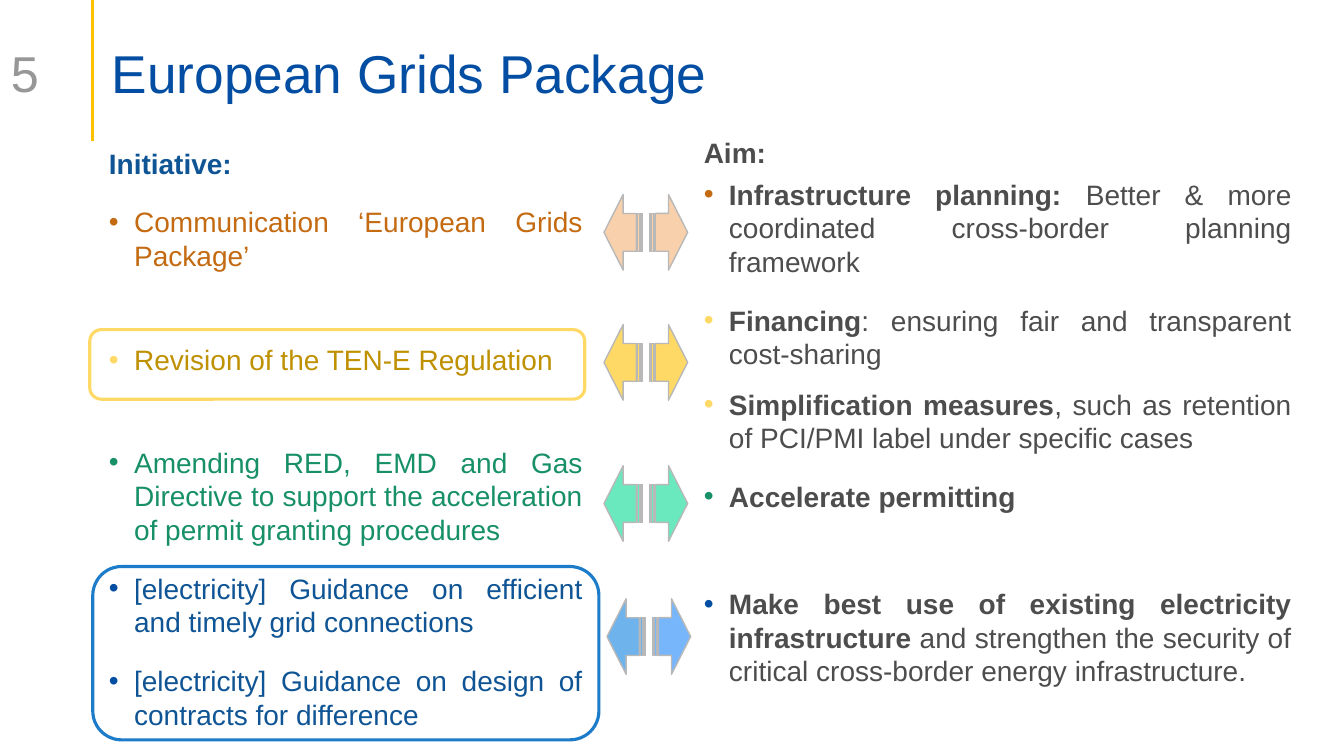
from lxml import etree
from pptx import Presentation, util as u
from pptx.dml.color import RGBColor
from pptx.enum import shapes, text
from pptx.oxml.ns import qn

WIDTH, HEIGHT = 13.33, 7.5
FONT = "Arial"
COLOURS = {
    "white": "FFFFFF", "gold": "FFC000", "title": "034EA2", "number": "979797",
    "navy": "0F5494", "grey": "4D4D4D", "orange": "C46A11", "yellow": "FFD966",
    "mustard": "BF9000", "green": "179068", "frame": "1C7CCA", "edge": "B8B8B8",
    "peach": "F8D1AC", "mint": "6AE8BE", "sky": "78B6FC", "azure": "6EB3EB",
}
INITIATIVES = [
    (None, 18, [("Initiative:", "navy", True)]),
    ("orange", 50.5, [("Communication ‘European Grids Package’", "orange", False)]),
    ("yellow", 49, [("Revision of the TEN-E Regulation", "mustard", False)]),
    ("green", 18, [("Amending RED, EMD and Gas Directive to support the acceleration "
                    "of permit granting procedures", "green", False)]),
    ("title", 18, [("[electricity] Guidance on efficient and timely grid connections",
                    "navy", False)]),
    ("title", 18, [("[electricity] Guidance on design of contracts for difference",
                    "navy", False)]),
]
AIMS = [
    (None, 6, [("Aim:", "grey", True)]),
    ("orange", 18, [("Infrastructure planning: ", "grey", True),
                    ("Better & more coordinated cross-border planning framework",
                     "grey", False)]),
    ("yellow", 12, [("Financing", "grey", True),
                    (": ensuring fair and transparent cost-sharing", "grey", False)]),
    ("yellow", 18, [("Simplification measures", "grey", True),
                    (", such as retention of PCI/PMI label under specific cases",
                     "grey", False)]),
    ("green", 52.5, [("Accelerate permitting", "grey", True)]),
    ("title", 18, [("Make best use of existing electricity infrastructure", "grey", True),
                   (" and strengthen the security of critical cross-border energy "
                    "infrastructure.", "grey", False)]),
]
ARROW_PAIRS = [
    (5.99, 1.93, "peach", "peach"),
    (5.99, 3.22, "yellow", "yellow"),
    (5.99, 4.62, "mint", "mint"),
    (6.02, 5.94, "azure", "sky"),
]


def apply(target, values):
    for name, value in values.items():
        setattr(target, name, value)


def colour(name):
    return RGBColor.from_string(COLOURS[name])


def inches(box):
    return [u.Inches(length) for length in box]


def add_text_box(page, box, margins, anchor):
    shape = page.shapes.add_textbox(*inches(box))
    frame = shape.text_frame
    sides = ("margin_left", "margin_top", "margin_right", "margin_bottom")
    apply(frame, dict(zip(sides, inches(margins))))
    apply(frame, {"word_wrap": True, "auto_size": text.MSO_AUTO_SIZE.NONE,
                  "vertical_anchor": anchor})
    return shape


def add_span(para, words, size, shade, bold=False):
    span = para.add_run()
    span.text = words
    apply(span.font, {"name": FONT, "size": u.Pt(size), "bold": bold})
    span.font.color.rgb = colour(shade)


def add_bullet(para, shade):
    properties = para._p.get_or_add_pPr()
    indent = u.Inches(0.25)
    properties.set("marL", str(indent))
    properties.set("indent", str(-indent))
    holder = etree.SubElement(properties, qn("a:buClr"))
    etree.SubElement(holder, qn("a:srgbClr")).set("val", COLOURS[shade])
    etree.SubElement(properties, qn("a:buFont")).set("typeface", FONT)
    etree.SubElement(properties, qn("a:buChar")).set("char", "•")


def add_shape(page, kind, box, fill, line, weight):
    shape = page.shapes.add_shape(kind, *inches(box))
    shape.shadow.inherit = False
    if fill:
        shape.fill.solid()
        shape.fill.fore_color.rgb = colour(fill)
    else:
        shape.fill.background()
    shape.line.color.rgb = colour(line)
    shape.line.width = u.Pt(weight)
    return shape


def add_header(page, box):
    left, top, width, height = box
    rule = page.shapes.add_connector(shapes.MSO_CONNECTOR.STRAIGHT,
                                     *inches((left + 0.92, top, left + 0.92, top + height)))
    rule.line.color.rgb = colour("gold")
    rule.line.width = u.Pt(2.25)
    etree.SubElement(rule._element.spPr, qn("a:effectLst"))
    title = add_text_box(page, (left + 1.01, top + 0.4, width - 1.83, 0.64),
                         (0.1, 0.05, 0.1, 0), text.MSO_ANCHOR.BOTTOM)
    para = title.text_frame.paragraphs[0]
    para.line_spacing = 0.9
    add_span(para, "European Grids Package", 38, "title")
    number = add_text_box(page, (left + 0.01, top + 0.52, 0.89, 0.4),
                          (0.1, 0.05, 0.1, 0.05), text.MSO_ANCHOR.MIDDLE)
    add_span(number.text_frame.paragraphs[0], "5", 36, "number")


def add_column(page, box, entries, fill=None):
    shape = add_text_box(page, box, [0.16] * 4, text.MSO_ANCHOR.TOP)
    if fill:
        shape.fill.solid()
        shape.fill.fore_color.rgb = colour(fill)
    frame = shape.text_frame
    for index, (bullet, gap, spans) in enumerate(entries):
        para = frame.add_paragraph() if index else frame.paragraphs[0]
        apply(para, {"alignment": text.PP_ALIGN.JUSTIFY,
                     "space_before": u.Pt(0), "space_after": u.Pt(gap)})
        if bullet:
            add_bullet(para, bullet)
        for words, shade, bold in spans:
            add_span(para, words, 20, shade, bold)


def add_arrow_pair(page, box, left_fill, right_fill):
    left, top, width, height = box
    arrow_width = 0.38
    sides = ((left, 180, left_fill), (left + width - arrow_width, 0, right_fill))
    for start, rotation, fill in sides:
        arrow = add_shape(page, shapes.MSO_SHAPE.STRIPED_RIGHT_ARROW,
                          (start, top, arrow_width, height), fill, "edge", 1)
        arrow.rotation = rotation


def build_slide(deck):
    page = deck.slides.add_slide(deck.slide_layouts[6])
    add_header(page, (0, 0, WIDTH, 1.4))
    add_column(page, (0.92, 1.29, 5.02, 5.99), INITIATIVES)
    add_column(page, (6.82, 1.18, 6.15, 5.99), AIMS, "white")
    for box, line in (((0.89, 3.27, 4.91, 0.69), "yellow"),
                      ((0.92, 5.62, 5.02, 1.72), "frame")):
        add_shape(page, shapes.MSO_SHAPE.ROUNDED_RECTANGLE, box, None, line, 2.25)
    for left, top, left_fill, right_fill in ARROW_PAIRS:
        add_arrow_pair(page, (left, top, 0.83, 0.75), left_fill, right_fill)


def main():
    deck = Presentation()
    apply(deck, {"slide_width": u.Inches(WIDTH), "slide_height": u.Inches(HEIGHT)})
    build_slide(deck)
    deck.save("out.pptx")


if __name__ == "__main__":
    main()
